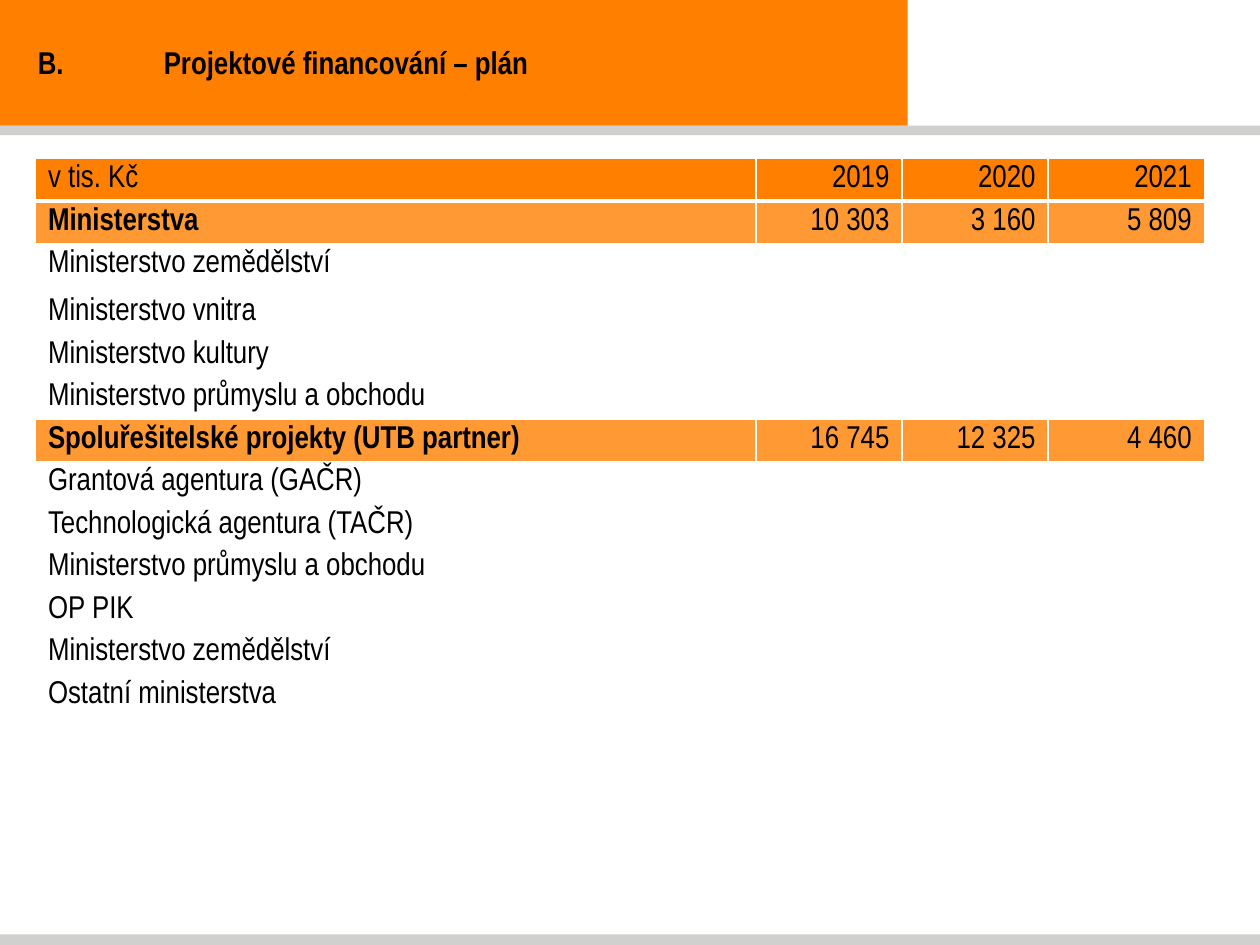
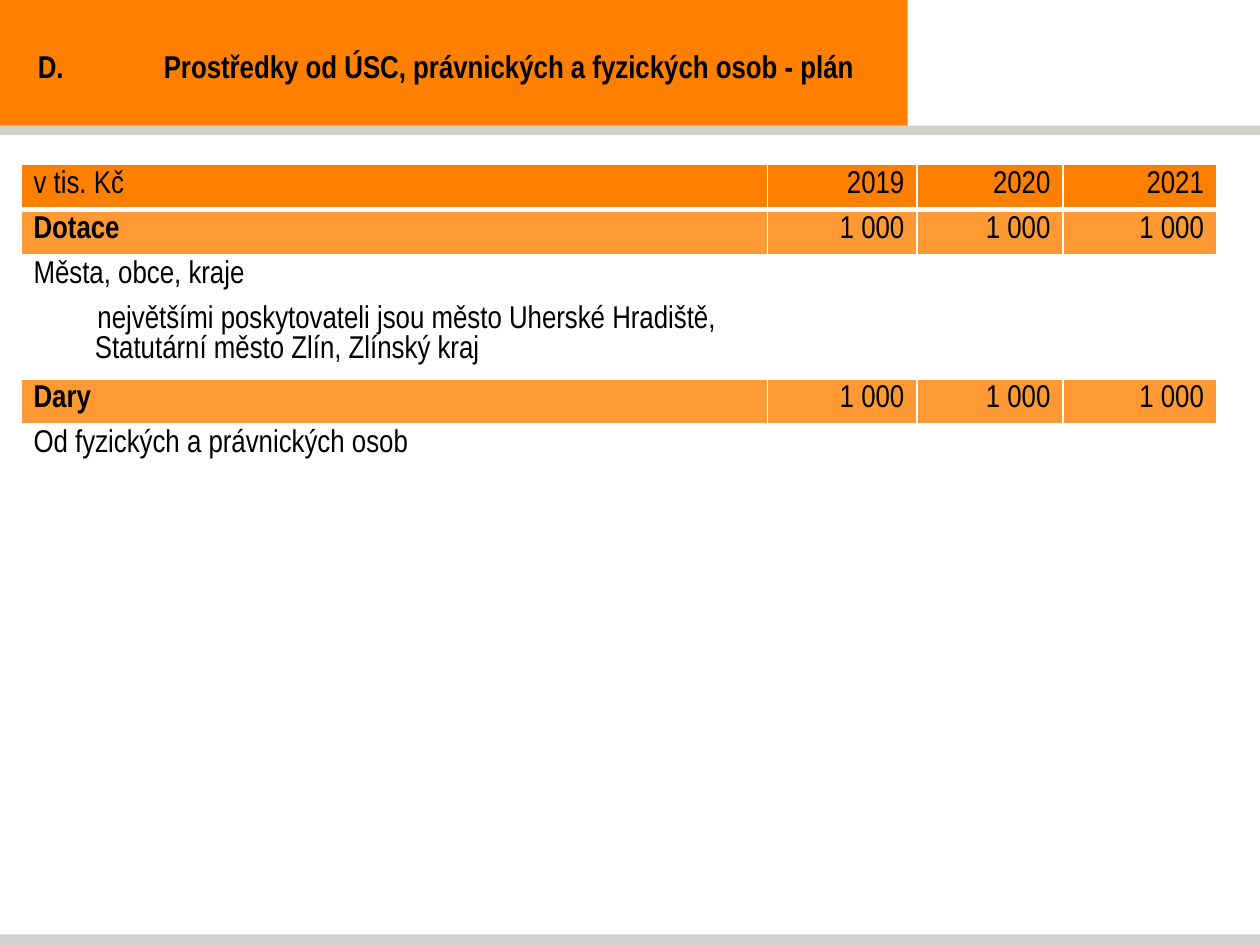
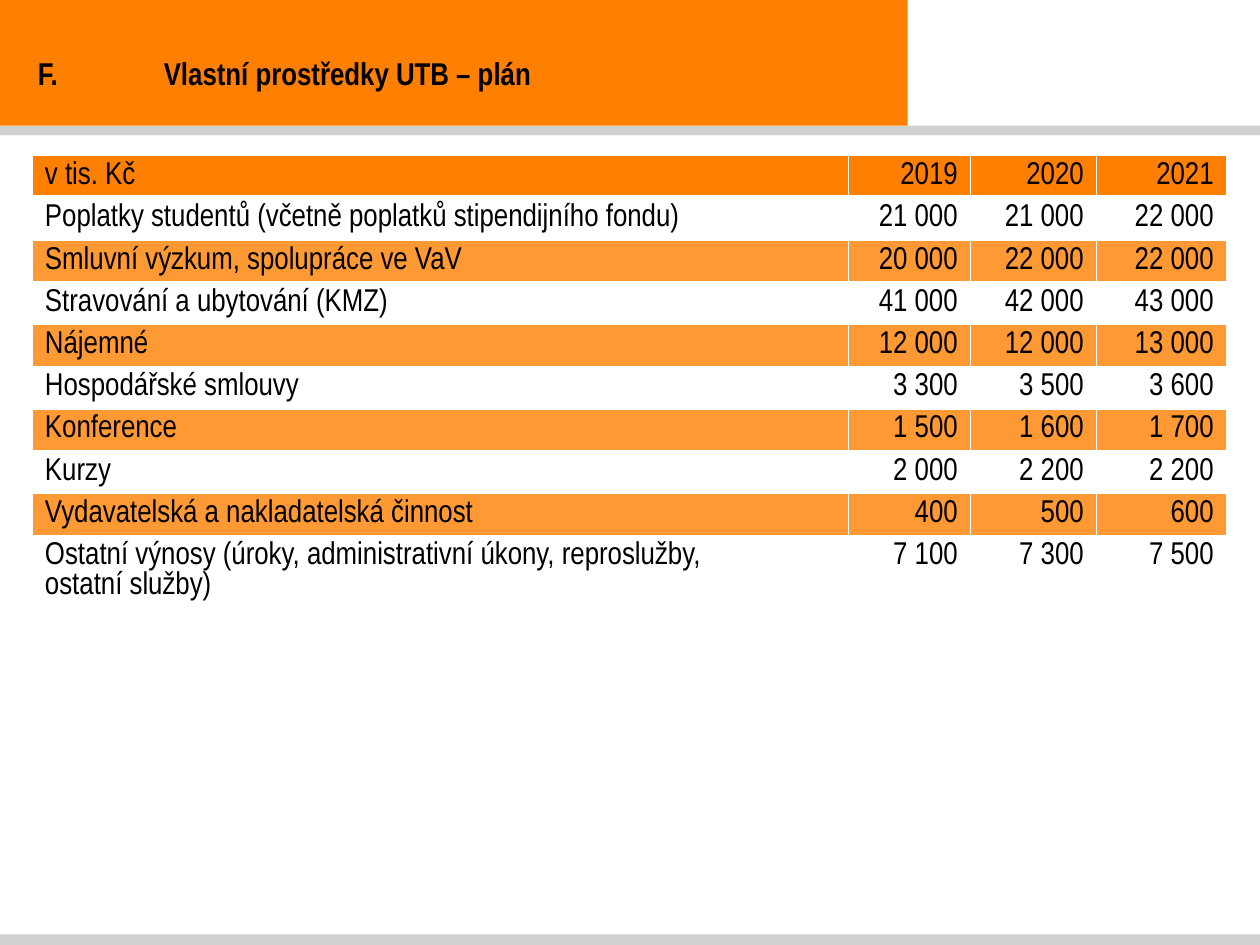
"""Build three slides with the planned funding tables of UTB."""
import pptx
import pptx.dml.color
import pptx.enum.shapes
import pptx.enum.text
import pptx.oxml
import pptx.oxml.ns
import pptx.util

Pt = pptx.util.Pt
ALIGN = pptx.enum.text.PP_ALIGN
MIDDLE = pptx.enum.text.MSO_ANCHOR.MIDDLE
ORANGE, LIGHT, GREY, WHITE, BLACK = "FF8001", "FF9933", "D0D0CE", "FFFFFF", "000000"
FONT, SIZE, LINE = "Arial Narrow", 18, 16.9
NS = pptx.oxml.ns.nsdecls("a")
HEADER = ("v tis. Kč", "2019", "2020", "2021")


def rgb(value):
    """Return the colour of a hex string."""
    return pptx.dml.color.RGBColor.from_string(value)


def add_run(p, text, bold=False):
    """Add a run in the shared text style."""
    r = p.add_run()
    r.text = text
    r.font.name, r.font.size, r.font.bold = FONT, Pt(SIZE), bold
    r.font.color.rgb = rgb(BLACK)


slides = [
    {
        "title": "B.\tProjektové financování – plán",
        "title_height": 26,
        "at": (20.25, 90.5),
        "cols": (411.75, 83.5, 83.5, 89.25),
        "row": 24.3,
        "tall": {2: 27.5},
        "bands": (1, 6),
        "bold_bands": True,
        "rows": [
            ("Ministerstva", "10 303", "3 160", "5 809"),
            ("Ministerstvo zemědělství",),
            ("Ministerstvo vnitra",),
            ("Ministerstvo kultury",),
            ("Ministerstvo průmyslu a obchodu",),
            ("Spoluřešitelské projekty (UTB partner)", "16 745", "12 325", "4 460"),
            ("Grantová agentura (GAČR)",),
            ("Technologická agentura (TAČR)",),
            ("Ministerstvo průmyslu a obchodu",),
            ("OP PIK",),
            ("Ministerstvo zemědělství",),
            ("Ostatní ministerstva",),
        ],
    },
    {
        "title": "D.\tProstředky od ÚSC, právnických a fyzických osob - plán",
        "title_height": 30,
        "at": (12, 94),
        "cols": (426.5, 85.5, 83.5, 87.75),
        "row": 25.75,
        "tall": {3: 45.25},
        "bands": (1, 4),
        "bold_bands": True,
        "indented": 3,
        "rows": [
            ("Dotace", "1 000", "1 000", "1 000"),
            ("Města, obce, kraje",),
            ("největšími poskytovateli jsou město Uherské Hradiště,\v"
             "Statutární město Zlín, Zlínský kraj",),
            ("Dary", "1 000", "1 000", "1 000"),
            ("Od fyzických a právnických osob",),
        ],
    },
    {
        "title": "F.\tVlastní prostředky UTB – plán",
        "title_height": 38,
        "at": (18.5, 88.9),
        "cols": (466.25, 69.75, 72, 74.25),
        "row": 24.13,
        "tall": {9: 41.75},
        "bands": (2, 4, 6, 8),
        "bold_bands": False,
        "rows": [
            ("Poplatky studentů (včetně poplatků stipendijního fondu)", "21 000", "21 000", "22 000"),
            ("Smluvní výzkum, spolupráce ve VaV", "20 000", "22 000", "22 000"),
            ("Stravování a ubytování (KMZ)", "41 000", "42 000", "43 000"),
            ("Nájemné", "12 000", "12 000", "13 000"),
            ("Hospodářské smlouvy", "3 300", "3 500", "3 600"),
            ("Konference", "1 500", "1 600", "1 700"),
            ("Kurzy", "2 000", "2 200", "2 200"),
            ("Vydavatelská a nakladatelská činnost", "400", "500", "600"),
            ("Ostatní výnosy (úroky, administrativní úkony, reproslužby,\nostatní služby)",
             "7 100", "7 300", "7 500"),
        ],
    },
]

prs = pptx.Presentation()
prs.slide_width, prs.slide_height = Pt(720), Pt(540)
layout = prs.slide_layouts[5]

for number, data in enumerate(slides):
    s = prs.slides.add_slide(layout)

    if number == 0:
        for top, width, height, colour in ((0, 518.75, 71.75, ORANGE),
                                           (534, 720, 6, GREY),
                                           (71.75, 720, 5.5, GREY)):
            sp = s.shapes.add_shape(pptx.enum.shapes.MSO_SHAPE.RECTANGLE,
                                    0, Pt(top), Pt(width), Pt(height))
            sp.shadow.inherit = False
            sp.fill.solid()
            sp.fill.fore_color.rgb = rgb(colour)
            sp.line.fill.background()
            layout.shapes.element.insert(2, sp.element)

    title = s.shapes.title
    title.left, title.top = Pt(0), Pt(22.5)
    title.width, title.height = Pt(518.5), Pt(data["title_height"])
    tf = title.text_frame
    tf.word_wrap, tf.vertical_anchor = True, MIDDLE
    tf.auto_size = pptx.enum.text.MSO_AUTO_SIZE.NONE
    p = tf.paragraphs[0]
    p.alignment = ALIGN.JUSTIFY
    pPr = p._p.get_or_add_pPr()
    pPr.set("marL", str(Pt(14.4)))
    pPr.set("indent", "0")
    pPr.set("defTabSz", str(Pt(72)))
    pPr.append(pptx.oxml.parse_xml(
        f'<a:tabLst {NS}><a:tab pos="{Pt(72)}" algn="l"/></a:tabLst>'))
    add_run(p, data["title"], True)

    rows = [HEADER] + data["rows"]
    heights = [data["tall"].get(i, data["row"]) for i in range(len(rows))]
    left, top = data["at"]
    table = s.shapes.add_table(len(rows), len(HEADER), Pt(left), Pt(top),
                               Pt(sum(data["cols"])), Pt(sum(heights))).table
    table.horz_banding = False
    for col, width in zip(table.columns, data["cols"]):
        col.width = Pt(width)

    for i, values in enumerate(rows):
        table.rows[i].height = Pt(heights[i])
        banded = i in data["bands"]
        for j in range(len(HEADER)):
            cell = table.cell(i, j)
            tcPr = cell._tc.get_or_add_tcPr()
            for side in "LRTB":
                thick = (i, side) in ((0, "B"), (1, "T"))
                tcPr.append(pptx.oxml.parse_xml(
                    f'<a:ln{side} {NS} w="{Pt(3 if thick else 1)}"><a:solidFill>'
                    f'<a:srgbClr val="{WHITE}"/></a:solidFill></a:ln{side}>'))
            cell.fill.solid()
            cell.fill.fore_color.rgb = rgb(ORANGE if i == 0 else LIGHT if banded else WHITE)

            text = values[j] if j < len(values) else ""
            if not text:
                cell.margin_top = cell.margin_bottom = Pt(0)
            tf = cell.text_frame
            for k, paragraph in enumerate(text.split("\n")):
                p = tf.add_paragraph() if k else tf.paragraphs[0]
                p.line_spacing = Pt(LINE)
                p.alignment = ALIGN.RIGHT if j else ALIGN.LEFT
                if j == 0 and i == data.get("indented"):
                    pPr = p._p.get_or_add_pPr()
                    pPr.set("marL", str(Pt(35)))
                    pPr.set("indent", str(Pt(1.5)))
                for n, line in enumerate(paragraph.split("\v")):
                    if n:
                        p.add_line_break()
                    if line:
                        add_run(p, line, banded and j == 0 and data["bold_bands"])

prs.save("out.pptx")
